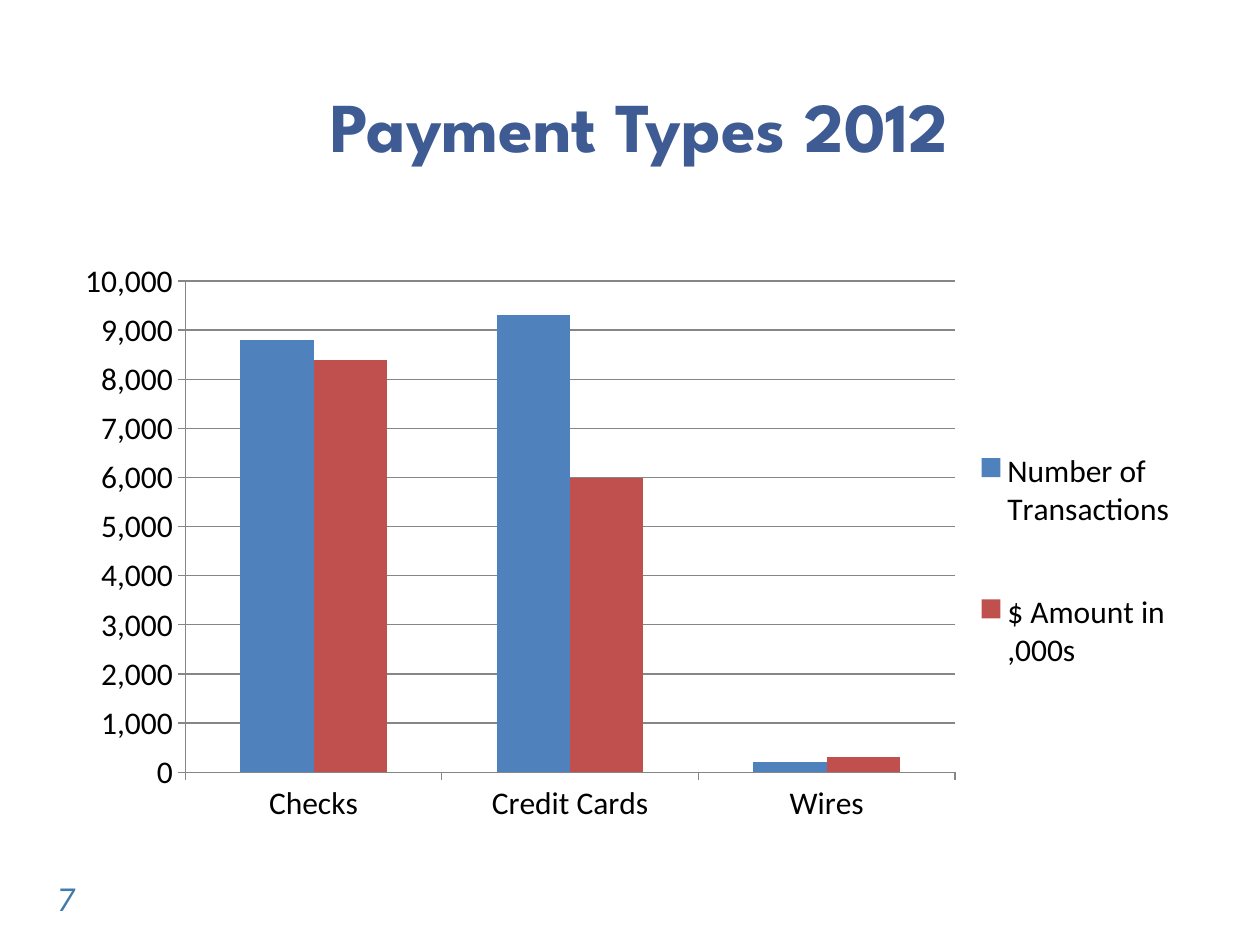
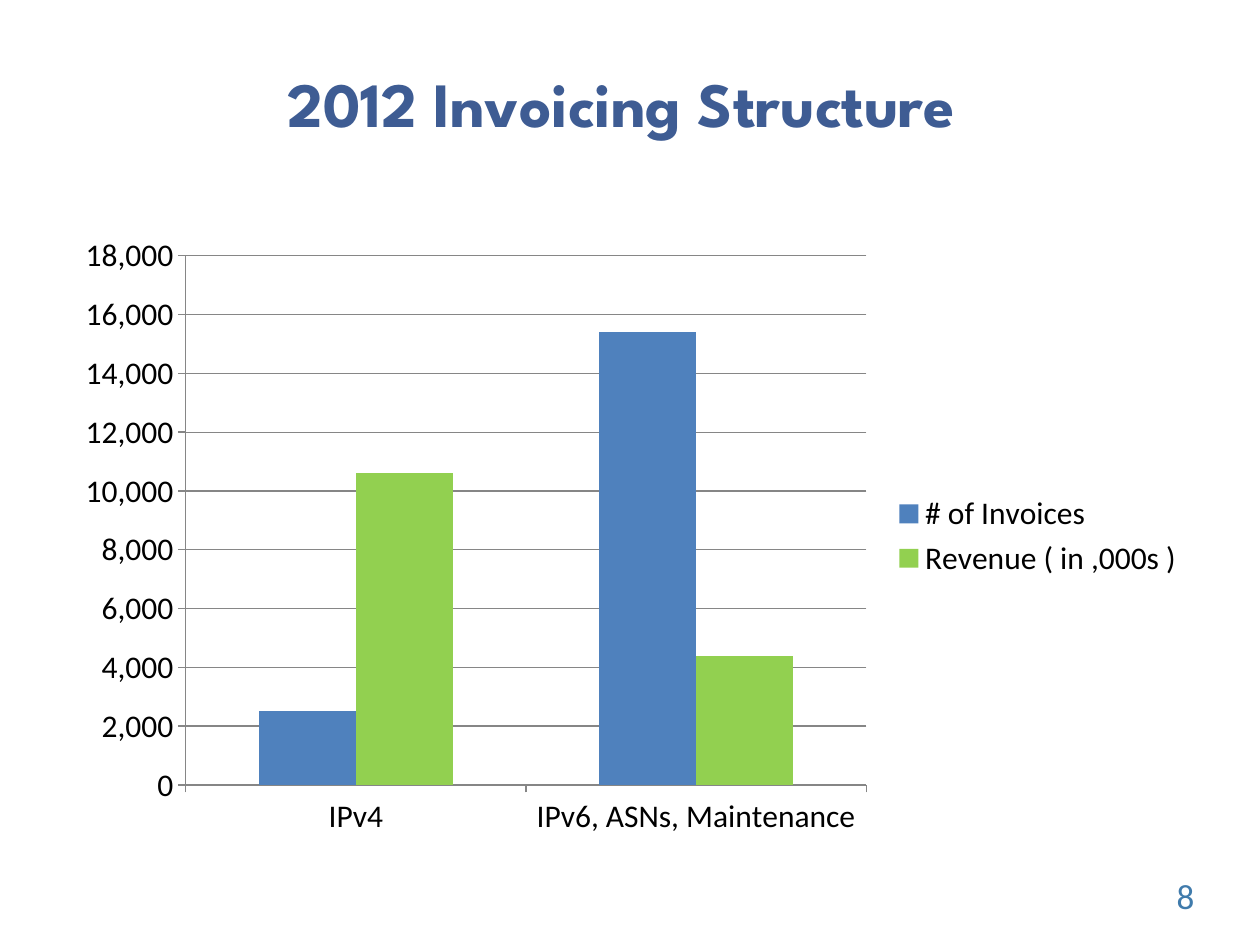
from lxml import etree
from pptx import Presentation
from pptx import util as u
from pptx.chart import data as chart_data
from pptx.dml.color import RGBColor
from pptx.enum import chart as chart_enum, text
from pptx.oxml import ns

COLORS = {
    "title": "3E5C93",
    "page_number": "407BAC",
    "text": "000000",
    "axis": "868686",
    "blue": "4F81BD",
    "red": "C0504D",
    "green": "92D050",
}
TITLE_FONT = "League Spartan"
BODY_FONT = "Calibri"
TITLE_ONLY_LAYOUT = 5

SLIDES = [
    {
        "title": "Payment Types 2012",
        "title_box": (0.5, 0.39, 9.29, 1.6),
        "title_size": 40,
        "chart_box": (0.5, 1.99, 9, 4.64),
        "plot_box": (0.97, 0.24, 6.11, 3.9),
        "legend_box": (7.21, 1.08, 1.65, 2.76),
        "categories": ["Checks", "Credit Cards", "Wires"],
        "series": [
            ("Number of Transactions", [8800, 9300, 200], "blue"),
            ("$ Amount in ,000s", [8400, 6000, 300], "red"),
        ],
        "scale": {"minimum_scale": 0, "maximum_scale": 10000, "major_unit": 1000},
        "number": "7",
        "number_box": (0.35, 6.91, 0.78, 0.4),
        "number_italic": True,
    },
    {
        "title": "2012 Invoicing Structure",
        "title_box": (0.5, 0.58, 9, 0.87),
        "title_size": 36,
        "chart_box": (0.5, 1.78, 9, 4.95),
        "plot_box": None,
        "legend_box": None,
        "categories": ["IPv4", "IPv6, ASNs, Maintenance"],
        "series": [
            ("# of Invoices", [2500, 15400], "blue"),
            ("Revenue ( in ,000s )", [10600, 4400], "green"),
        ],
        "scale": {"minimum_scale": 0, "maximum_scale": 18000, "major_unit": 2000},
        "number": "8",
        "number_box": (9.24, 6.89, 0.78, 0.4),
        "number_italic": False,
    },
]


def color(name):
    return RGBColor.from_string(COLORS[name])


def inches(box):
    return [u.Inches(length) for length in box]


def set_attributes(target, values):
    for name, value in values.items():
        setattr(target, name, value)


def set_font(font, color_name, **values):
    set_attributes(font, values)
    font.color.rgb = color(color_name)


def place_title(slide, box, wording, size):
    title = slide.shapes.title
    left, top, width, height = inches(box)
    set_attributes(title, {"left": left, "top": top, "width": width, "height": height})
    frame = title.text_frame
    frame.text = wording
    set_attributes(frame, {
        "word_wrap": True,
        "auto_size": text.MSO_AUTO_SIZE.NONE,
        "vertical_anchor": text.MSO_ANCHOR.MIDDLE,
        "margin_top": u.Inches(0.05),
        "margin_right": u.Inches(0.24),
        "margin_bottom": u.Inches(0.45),
    })
    paragraph = frame.paragraphs[0]
    paragraph.alignment = text.PP_ALIGN.CENTER
    set_font(paragraph.runs[0].font, "title", name=TITLE_FONT, size=u.Pt(size), bold=True)


def format_line(line):
    line.color.rgb = color("axis")
    line.width = u.Pt(0.75)


def format_axis(axis):
    axis.major_tick_mark = chart_enum.XL_TICK_MARK.OUTSIDE
    axis.minor_tick_mark = chart_enum.XL_TICK_MARK.NONE
    format_line(axis.format.line)


def set_layout(element, box, chart_box, target=None):
    for old_layout in element.findall(ns.qn("c:layout")):
        element.remove(old_layout)
    layout = etree.Element(ns.qn("c:layout"))
    manual = etree.SubElement(layout, ns.qn("c:manualLayout"))
    settings = [("layoutTarget", target)] if target else []
    settings += [("xMode", "edge"), ("yMode", "edge")]
    _, _, width, height = chart_box
    for name, length, whole in zip("xywh", box, (width, height, width, height)):
        settings.append((name, str(length / whole)))
    for name, value in settings:
        etree.SubElement(manual, ns.qn(f"c:{name}")).set("val", value)
    position = element.find(ns.qn("c:legendPos"))
    element.insert(0 if position is None else element.index(position) + 1, layout)


def place_chart(slide, box, categories, series, scale, plot_box, legend_box):
    data = chart_data.CategoryChartData(number_format="#,##0")
    data.categories = categories
    for name, values, _ in series:
        data.add_series(name, values)
    chart = slide.shapes.add_chart(
        chart_enum.XL_CHART_TYPE.COLUMN_CLUSTERED, *inches(box), data).chart
    set_font(chart.font, "text", name=BODY_FONT, size=u.Pt(18))
    set_attributes(chart, {"has_title": False, "has_legend": True})
    set_attributes(chart.legend, {
        "position": chart_enum.XL_LEGEND_POSITION.RIGHT,
        "include_in_layout": False,
    })

    plot = chart.plots[0]
    set_attributes(plot, {"gap_width": 150, "overlap": 0, "vary_by_categories": False})
    for column, (_, _, color_name) in zip(plot.series, series):
        column.format.fill.solid()
        column.format.fill.fore_color.rgb = color(color_name)

    value_axis = chart.value_axis
    format_axis(chart.category_axis)
    format_axis(value_axis)
    set_attributes(value_axis, {"has_major_gridlines": True, **scale})
    set_attributes(value_axis.tick_labels, {
        "number_format": "#,##0",
        "number_format_is_linked": False,
    })
    format_line(value_axis.major_gridlines.format.line)

    chart_element = chart.element.find(ns.qn("c:chart"))
    if plot_box:
        set_layout(chart_element.find(ns.qn("c:plotArea")), plot_box, box, "inner")
    if legend_box:
        set_layout(chart_element.find(ns.qn("c:legend")), legend_box, box)


def place_page_number(slide, box, number, italic):
    frame = slide.shapes.add_textbox(*inches(box)).text_frame
    frame.word_wrap = True
    frame.text = number
    set_font(frame.paragraphs[0].runs[0].font, "page_number",
             name=BODY_FONT, size=u.Pt(20), italic=italic)


def add_chart_slide(presentation, content):
    slide = presentation.slides.add_slide(presentation.slide_layouts[TITLE_ONLY_LAYOUT])
    place_title(slide, content["title_box"], content["title"], content["title_size"])
    place_chart(slide, content["chart_box"], content["categories"], content["series"],
                content["scale"], content["plot_box"], content["legend_box"])
    place_page_number(slide, content["number_box"], content["number"],
                      content["number_italic"])


def main():
    presentation = Presentation()
    presentation.slide_width = u.Inches(10)
    presentation.slide_height = u.Inches(7.5)
    for content in SLIDES:
        add_chart_slide(presentation, content)
    presentation.save("out.pptx")


if __name__ == "__main__":
    main()
